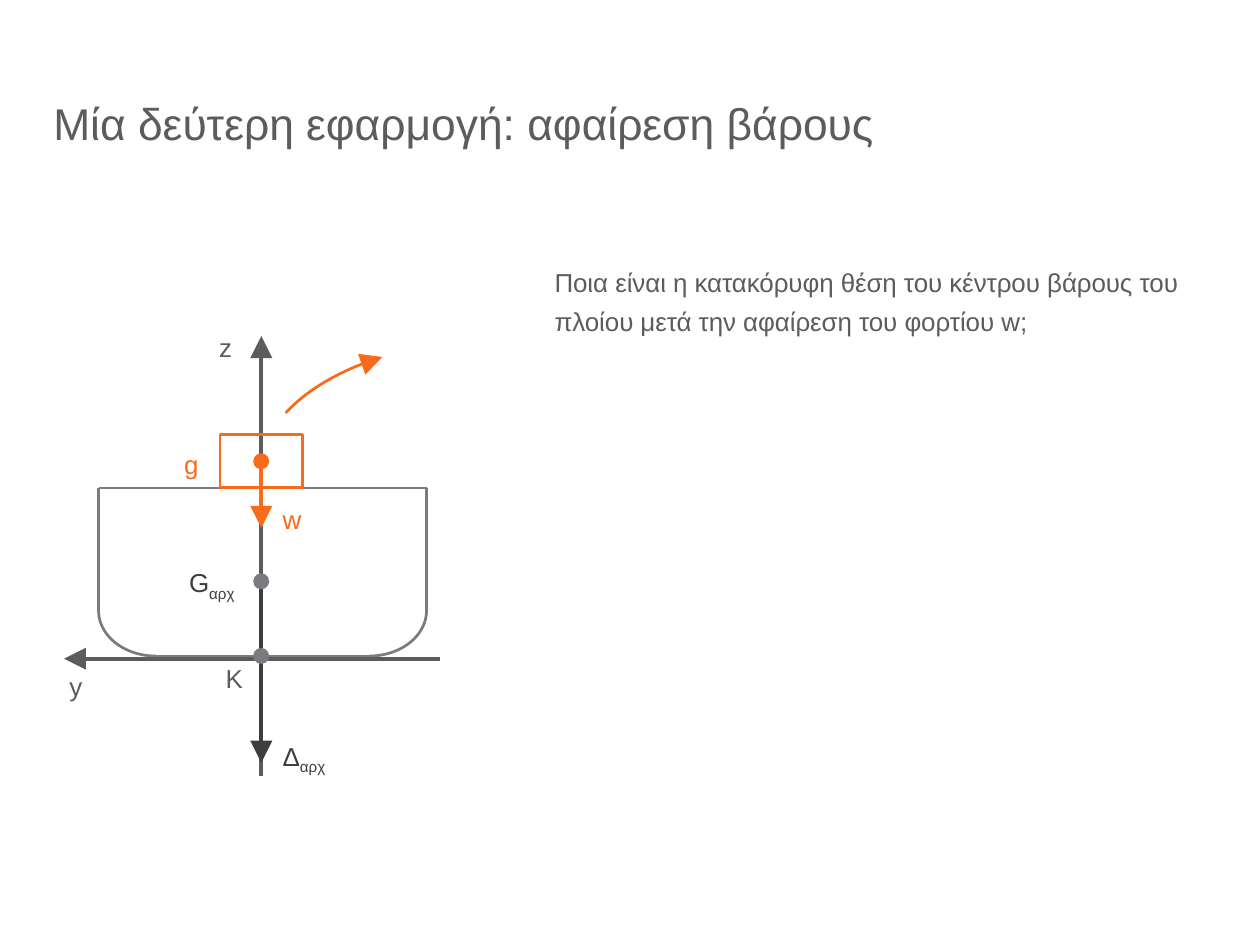
from lxml import etree
from pptx import Presentation
from pptx.dml.color import RGBColor
from pptx.enum.shapes import MSO_CONNECTOR, MSO_SHAPE as SHAPE
from pptx.enum.text import MSO_ANCHOR as ANCHOR, MSO_AUTO_SIZE, PP_ALIGN as ALIGN
from pptx.oxml.ns import qn
from pptx.util import Inches, Pt

TEXT, DARK, GREY, ORANGE = "5B5C5E", "3C3E3F", "797B7E", "F96A1B"
DOT = 0.06


def color(value):
    return RGBColor.from_string(value)


def place(shape, left, top, width, height):
    box = {"left": left, "top": top, "width": width, "height": height}
    for name, value in box.items():
        setattr(shape, name, Inches(value))


def write(shape, runs, size, text_color, spacing, align=ALIGN.LEFT, anchor=ANCHOR.TOP,
          auto_size=MSO_AUTO_SIZE.NONE):
    """Fill a shape with one paragraph; every run after the first is a subscript."""
    frame = shape.text_frame
    frame_format = {"margin_left": 0, "margin_top": 0, "margin_right": 0, "margin_bottom": 0,
                    "word_wrap": True, "vertical_anchor": anchor, "auto_size": auto_size}
    for name, value in frame_format.items():
        setattr(frame, name, value)
    paragraph = frame.paragraphs[0]
    paragraph.alignment = align
    paragraph.line_spacing = spacing
    for index, text in enumerate(runs):
        run = paragraph.add_run()
        run.text = text
        for name, value in {"name": "Arial", "size": Pt(size), "bold": False}.items():
            setattr(run.font, name, value)
        run.font.color.rgb = color(text_color)
        if index:
            run.font._element.set("baseline", "-25000")


def style_line(line, line_color, width, arrow=False):
    line.color.rgb = color(line_color)
    line.width = Pt(width)
    if arrow:
        etree.SubElement(line._get_or_add_ln(), qn("a:tailEnd"), type="triangle")


def add_line(slide, start, end, line_color, width, arrow=False):
    points = [Inches(value) for value in (*start, *end)]
    connector = slide.shapes.add_connector(MSO_CONNECTOR.STRAIGHT, *points)
    style_line(connector.line, line_color, width, arrow)
    etree.SubElement(connector._element.spPr, qn("a:effectLst"))


def add_outline(slide, kind, box, line_color, angles=(), arrow=False):
    """Add an unfilled shape; angles are the start and end of an arc in degrees."""
    shape = slide.shapes.add_shape(kind, *map(Inches, box))
    shape.shadow.inherit = False
    shape.fill.background()
    for index, angle in enumerate(angles):
        shape.adjustments[index] = angle * 0.6
    style_line(shape.line, line_color, 0.75, arrow)
    return shape


def add_dot(slide, center_x, center_y, fill_color):
    box = (center_x - DOT / 2, center_y - DOT / 2, DOT, DOT)
    dot = slide.shapes.add_shape(SHAPE.OVAL, *map(Inches, box))
    dot.shadow.inherit = False
    dot.fill.solid()
    dot.fill.fore_color.rgb = color(fill_color)
    dot.line.fill.background()


def add_title(slide, left, top, width, height):
    title = slide.shapes.title
    place(title, left, top, width, height)
    write(title, ["Μία δεύτερη εφαρμογή: αφαίρεση βάρους"], 12, TEXT, 1.25,
          anchor=ANCHOR.MIDDLE)


def add_question(slide, left, top, width, height):
    question = slide.shapes.add_textbox(*map(Inches, (left, top, width, height)))
    write(question, ["Ποια είναι η κατακόρυφη θέση του κέντρου βάρους του "
                     "πλοίου μετά την αφαίρεση του φορτίου w;"], 7, TEXT, 1.25)


def add_hull(slide, left, top, width, height):
    right, bottom = left + width, top + height
    corner_width, corner_height = 0.43, 0.34
    side_end = bottom - corner_height / 2
    bend = corner_width / 2
    sides = [((left, top), (right, top)),
             ((left, top), (left, side_end)),
             ((right, top), (right, side_end)),
             ((left + bend, bottom), (right - bend, bottom))]
    for start, end in sides:
        add_line(slide, start, end, GREY, 0.75)
    for corner_left, angles in ((right - corner_width, (0, 90)), (left, (90, 180))):
        box = (corner_left, bottom - corner_height, corner_width, corner_height)
        add_outline(slide, SHAPE.ARC, box, GREY, angles)


def add_ship_diagram(slide, left, top, width, height):
    axis_x, keel_y = left + 0.74, top + 1.25
    gravity_y, load_y = top + 0.96, top + 0.51
    deck_y = top + 0.61
    add_hull(slide, left + 0.13, deck_y, 1.23, 0.63)
    add_line(slide, (axis_x, top + height), (axis_x, top + 0.04), TEXT, 1, arrow=True)
    add_line(slide, (left + width, keel_y), (left, keel_y), TEXT, 1, arrow=True)
    add_line(slide, (axis_x, gravity_y), (axis_x, top + 1.64), DARK, 1, arrow=True)
    add_dot(slide, axis_x, gravity_y, GREY)

    load_width, load_height = 0.31, 0.2
    add_outline(slide, SHAPE.RECTANGLE,
                (axis_x - load_width / 2, deck_y - load_height, load_width, load_height), ORANGE)
    add_dot(slide, axis_x, load_y, ORANGE)
    add_line(slide, (axis_x, load_y), (axis_x, top + 0.76), ORANGE, 1, arrow=True)
    add_dot(slide, axis_x, keel_y - 0.01, GREY)
    removal = add_outline(slide, SHAPE.ARC, (axis_x, top + 0.07, 1.43, 0.78), ORANGE,
                          (199.4, 240.2), arrow=True)
    removal.rotation = -7.5

    labels = [
        (["w"], 0.8, 0.64, 0.11, 0.15, ORANGE, ALIGN.CENTER, ANCHOR.MIDDLE),
        (["Δ", "αρχ"], 0.8, 1.54, 0.2, 0.14, DARK, ALIGN.CENTER, ANCHOR.MIDDLE),
        (["y"], 0.02, 1.27, 0.22, 0.13, TEXT, ALIGN.LEFT, ANCHOR.TOP),
        (["z"], 0.41, 0, 0.22, 0.13, TEXT, ALIGN.RIGHT, ANCHOR.TOP),
        (["G", "αρχ"], 0.44, 0.88, 0.23, 0.14, DARK, ALIGN.CENTER, ANCHOR.TOP),
        (["Κ"], 0.45, 1.24, 0.22, 0.14, TEXT, ALIGN.RIGHT, ANCHOR.TOP),
        (["g"], 0.45, 0.44, 0.22, 0.13, ORANGE, ALIGN.LEFT, ANCHOR.TOP),
    ]
    for runs, x, y, label_width, label_height, text_color, align, anchor in labels:
        box = (left + x, top + y, label_width, label_height)
        label = slide.shapes.add_textbox(*map(Inches, box))
        write(label, runs, 7, text_color, 1.2, align, anchor, MSO_AUTO_SIZE.SHAPE_TO_FIT_TEXT)


def main():
    presentation = Presentation()
    presentation.slide_width = Pt(340.25)
    presentation.slide_height = Pt(255.13)
    slide = presentation.slides.add_slide(presentation.slide_layouts[5])
    add_title(slide, 0.2, 0.2, 4.33, 0.47)
    add_question(slide, 2.08, 0.97, 2.41, 2.34)
    add_ship_diagram(slide, 0.24, 1.22, 1.41, 1.69)
    presentation.save("out.pptx")


if __name__ == "__main__":
    main()
